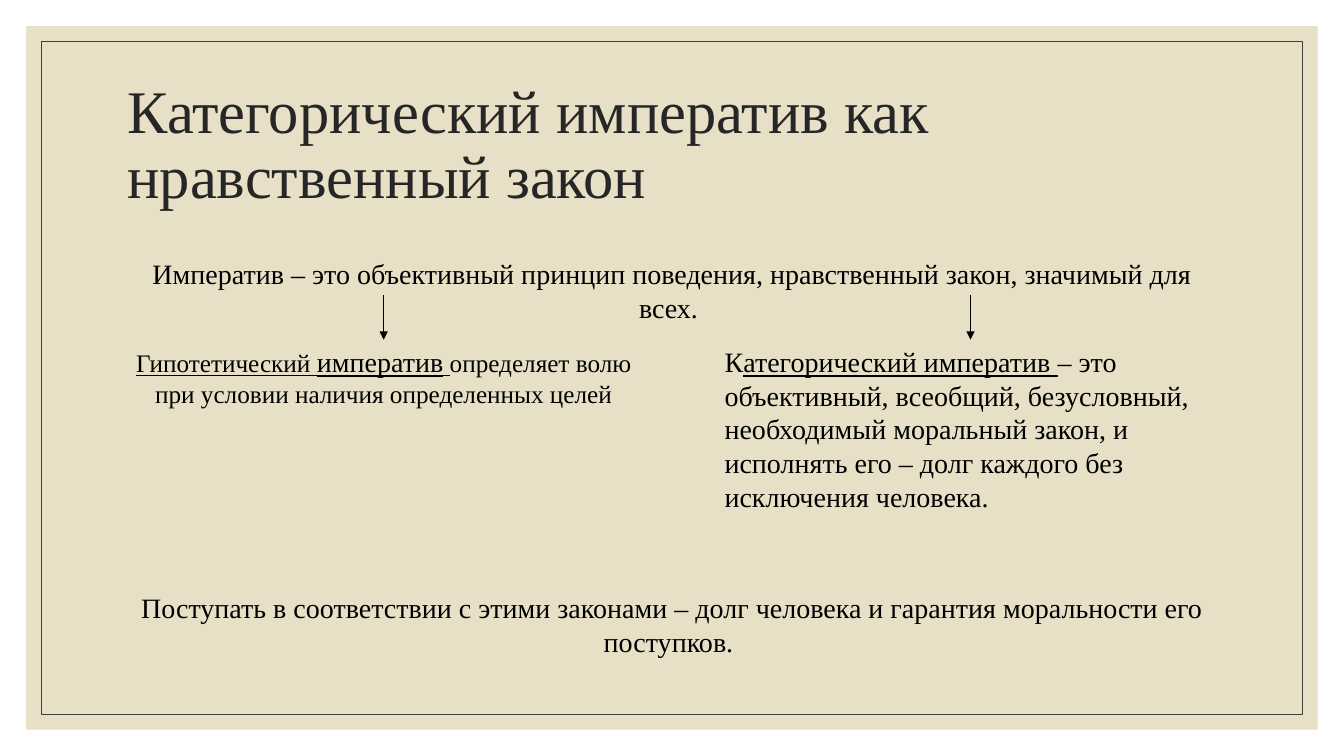
from lxml import etree
from pptx import Presentation
from pptx.dml.color import RGBColor
from pptx.enum.shapes import MSO_CONNECTOR, MSO_SHAPE
from pptx.enum.text import MSO_ANCHOR, PP_ALIGN
from pptx.oxml.ns import qn
from pptx.util import Inches, Pt

RECTANGLE = MSO_SHAPE.RECTANGLE
STRAIGHT = MSO_CONNECTOR.STRAIGHT
TOP, MIDDLE = MSO_ANCHOR.TOP, MSO_ANCHOR.MIDDLE
LEFT, CENTER = PP_ALIGN.LEFT, PP_ALIGN.CENTER

SAND = RGBColor(0xE7, 0xE0, 0xC7)
FRAME_GRAY = RGBColor(0x40, 0x40, 0x40)
TITLE_GRAY = RGBColor(0x26, 0x26, 0x26)
BLACK = RGBColor(0, 0, 0)

COLUMNS, ROWS = 80, 45
MARGIN = 7
CONTENT_WIDTH = COLUMNS - 2 * MARGIN
BRANCH_TOP = 20.22
ARROW_TOP = 17.58


class SlideBuilder:
    font = "Times New Roman"
    text_size = 20
    line_width = Pt(0.5)

    def __init__(self, presentation):
        self.slide = presentation.slides.add_slide(presentation.slide_layouts[6])
        self.column = presentation.slide_width / COLUMNS
        self.row = presentation.slide_height / ROWS

    def place(self, left, top, width, height):
        return (round(left * self.column), round(top * self.row),
                round(width * self.column), round(height * self.row))

    def panel(self, inset, fill=None, line=None):
        box = self.place(inset, inset, COLUMNS - 2 * inset, ROWS - 2 * inset)
        shape = self.slide.shapes.add_shape(RECTANGLE, *box)
        shape.shadow.inherit = False
        if fill is None:
            shape.fill.background()
        else:
            shape.fill.solid()
            shape.fill.fore_color.rgb = fill
        if line is None:
            shape.line.fill.background()
        else:
            shape.line.color.rgb = line
            shape.line.width = self.line_width

    def text(self, box, parts, align=CENTER, anchor=TOP, color=BLACK, spacing=None):
        text_frame = self.slide.shapes.add_textbox(*self.place(*box)).text_frame
        text_frame.word_wrap = True
        text_frame.vertical_anchor = anchor
        paragraph = text_frame.paragraphs[0]
        paragraph.alignment = align
        paragraph.line_spacing = spacing
        for wording, size, underline in parts:
            run = paragraph.add_run()
            run.text = wording
            run.font.name = self.font
            run.font.size = Pt(size)
            run.font.underline = underline
            run.font.color.rgb = color

    def statement(self, top, height, wording):
        self.text((MARGIN, top, CONTENT_WIDTH, height), [(wording, self.text_size, False)])

    def branch(self, left, width, height, parts, align):
        self.text((left, BRANCH_TOP, width, height), parts, align)
        self.arrow(left + width / 2, ARROW_TOP, BRANCH_TOP)

    def arrow(self, column, top, bottom):
        left, start, _, length = self.place(column, top, 0, bottom - top)
        connector = self.slide.shapes.add_connector(
            STRAIGHT, left, start, left, start + length)
        connector.line.color.rgb = BLACK
        connector.line.width = self.line_width
        line = connector.line._get_or_add_ln()
        etree.SubElement(line, qn("a:tailEnd"), type="triangle")
        etree.SubElement(connector._element.spPr, qn("a:effectLst"))


def main():
    presentation = Presentation()
    presentation.slide_width = Inches(13.33)
    presentation.slide_height = Inches(7.5)
    builder = SlideBuilder(presentation)

    builder.panel(1.56, fill=SAND)
    builder.panel(2.46, line=FRAME_GRAY)
    builder.text(
        (MARGIN, 4.2, CONTENT_WIDTH, 9),
        [("Категорический императив как нравственный закон", 43.2, False)],
        align=LEFT, anchor=MIDDLE, color=TITLE_GRAY, spacing=0.9)
    builder.statement(15, 3.48, "Императив – это объективный принцип поведения, "
                                "нравственный закон, значимый для всех. ")
    builder.branch(MARGIN, 31.68, 4.44, [
        ("Гипотетический ", 18, True),
        ("императив", 20, True),
        (" ", 18, True),
        ("определяет волю при условии наличия определенных целей", 18, False),
    ], CENTER)
    builder.branch(42.54, 30.46, 10.68, [
        ("К", 20, False),
        ("атегорический императив ", 20, True),
        ("– это объективный, всеобщий, безусловный, необходимый моральный закон, "
         "и исполнять его – долг каждого без исключения человека.", 20, False),
    ], LEFT)
    builder.statement(34.86, 4.62, "Поступать в соответствии с этими законами – долг "
                                   "человека и гарантия моральности его поступков. ")
    presentation.save("out.pptx")


if __name__ == "__main__":
    main()
